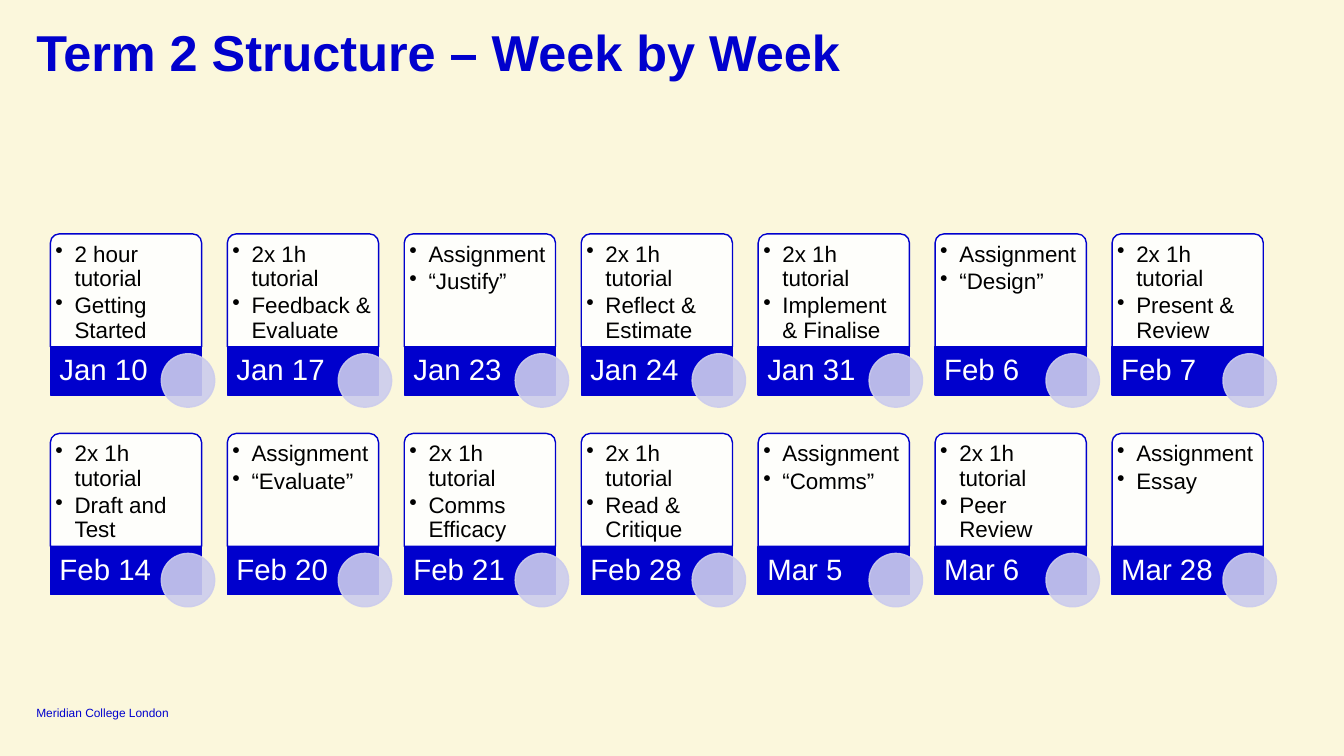
from dataclasses import dataclass

from lxml.etree import SubElement as Sub
from pptx import Presentation
from pptx.dml.color import RGBColor as RGB
from pptx.enum.shapes import MSO_SHAPE as Shape
from pptx.enum.text import MSO_ANCHOR as Anchor, MSO_AUTO_SIZE as Fit
from pptx.enum.text import PP_ALIGN as Align
from pptx.oxml.ns import qn
from pptx.util import Inches, Pt


@dataclass(frozen=True)
class Theme:
    font: str = "Arial"
    page: str = "FBF7DC"
    blue: str = "0000CD"
    white: str = "FFFFFF"
    black: str = "000000"
    lilac: str = "CCCCED"
    title: float = 36
    date: float = 21
    body: float = 16
    foot: float = 8.5


T = Theme()

# Card grid, in inches
LEFT, TOP = 0.5, 2.32
STEP, DROP = 1.755, 1.98
WIDE, TALL, BAND = 1.5, 1.12, 0.48
DOT = 0.53

TUTOR, TASK = "2x 1h tutorial", "Assignment"
WEEKS = [
    [
        ("Jan 10", "2 hour tutorial", "Getting Started"),
        ("Jan 17", TUTOR, "Feedback & Evaluate"),
        ("Jan 23", TASK, "“Justify”"),
        ("Jan 24", TUTOR, "Reflect & Estimate"),
        ("Jan 31", TUTOR, "Implement & Finalise"),
        ("Feb 6", TASK, "“Design”"),
        ("Feb 7", TUTOR, "Present & Review"),
    ],
    [
        ("Feb 14", TUTOR, "Draft and Test"),
        ("Feb 20", TASK, "“Evaluate”"),
        ("Feb 21", TUTOR, "Comms Efficacy"),
        ("Feb 28", TUTOR, "Read & Critique"),
        ("Mar 5", TASK, "“Comms”"),
        ("Mar 6", TUTOR, "Peer Review"),
        ("Mar 28", TASK, "Essay"),
    ],
]


def box(x, y, w, h):
    return [Inches(v) for v in (x, y, w, h)]


def fade(elem, share):
    """Set the opacity of every colour inside a fill or line."""
    for tint in elem.iter(qn("a:srgbClr")):
        Sub(tint, qn("a:alpha")).set("val", str(int(share * 100000)))


def panel(slide, kind, area, fill, line):
    shape = slide.shapes.add_shape(kind, *box(*area))
    shape.shadow.inherit = False
    shape.fill.solid()
    shape.fill.fore_color.rgb = RGB.from_string(fill)
    shape.line.color.rgb = RGB.from_string(line)
    shape.line.width = Pt(1)
    return shape


def write(shape, lines, size, color, inset=(0, 0, 0, 0), anchor=Anchor.TOP,
          bold=False, space=0.9, after=0):
    """Fill a text frame with evenly formatted paragraphs."""
    frame = shape.text_frame
    frame.text = "\n".join(lines)
    frame.word_wrap = True
    frame.auto_size = Fit.NONE
    frame.vertical_anchor = anchor
    (frame.margin_left, frame.margin_top,
     frame.margin_right, frame.margin_bottom) = box(*inset)
    for para in frame.paragraphs:
        para.alignment = Align.LEFT
        para.line_spacing = space
        para.space_before, para.space_after = Pt(0), Pt(after)
        for run in para.runs:
            run.font.name, run.font.size = T.font, Pt(size)
            run.font.bold = bold
            run.font.color.rgb = RGB.from_string(color)
    return frame


def label(slide, area, lines, size, color, **style):
    return write(slide.shapes.add_textbox(*box(*area)), lines, size, color, **style)


def bullet(frame):
    for para in frame.paragraphs:
        para.level = 1
        props = para._p.get_or_add_pPr()
        props.set("marL", str(Inches(0.19)))
        props.set("indent", str(-Inches(0.19)))
        Sub(props, qn("a:buChar")).set("char", "•")


def card(slide, col, row, date, *items):
    x, y = LEFT + col * STEP, TOP + row * DROP
    base = y + TALL

    # Activity panel
    top = panel(slide, Shape.ROUND_2_SAME_RECTANGLE, (x, y, WIDE, TALL),
                T.white, T.blue)
    top.adjustments[0], top.adjustments[1] = 0.08, 0
    fade(top.fill._xPr.find(qn("a:solidFill")), 0.9)
    bullet(label(slide, (x + 0.03, y + 0.02, 1.45, 1.09), items, T.body, T.black,
                 inset=(0.02, 0.07, 0.02, 0.02), after=2.4))

    # Date band
    panel(slide, Shape.RECTANGLE, (x, base, WIDE, BAND), T.blue, T.blue)
    label(slide, (x, base, 1.06, BAND), [date], T.date, T.white,
          inset=(0.09, 0, 0.03, 0), anchor=Anchor.MIDDLE)

    # Corner dot
    dot = panel(slide, Shape.OVAL, (x + 1.1, base + 0.07, DOT, DOT),
                T.lilac, T.lilac)
    fade(dot._element.spPr, 0.9)


def main():
    deck = Presentation()
    deck.slide_width, deck.slide_height = Inches(13.33), Inches(7.5)
    slide = deck.slides.add_slide(deck.slide_layouts[5])
    slide.background.fill.solid()
    slide.background.fill.fore_color.rgb = RGB.from_string(T.page)

    # Title
    title = slide.shapes.title
    title.left, title.top, title.width, title.height = box(0.36, 0.28, 12.62, 0.41)
    write(title, ["Term 2 Structure – Week by Week"], T.title, T.blue, bold=True)

    # Week cards
    for row, weeks in enumerate(WEEKS):
        for col, week in enumerate(weeks):
            card(slide, col, row, *week)

    # Footer
    label(slide, (0.36, 6.99, 1.55, 0.15), ["Meridian College London"],
          T.foot, T.blue, anchor=Anchor.BOTTOM, space=1)

    deck.save("out.pptx")


if __name__ == "__main__":
    main()
